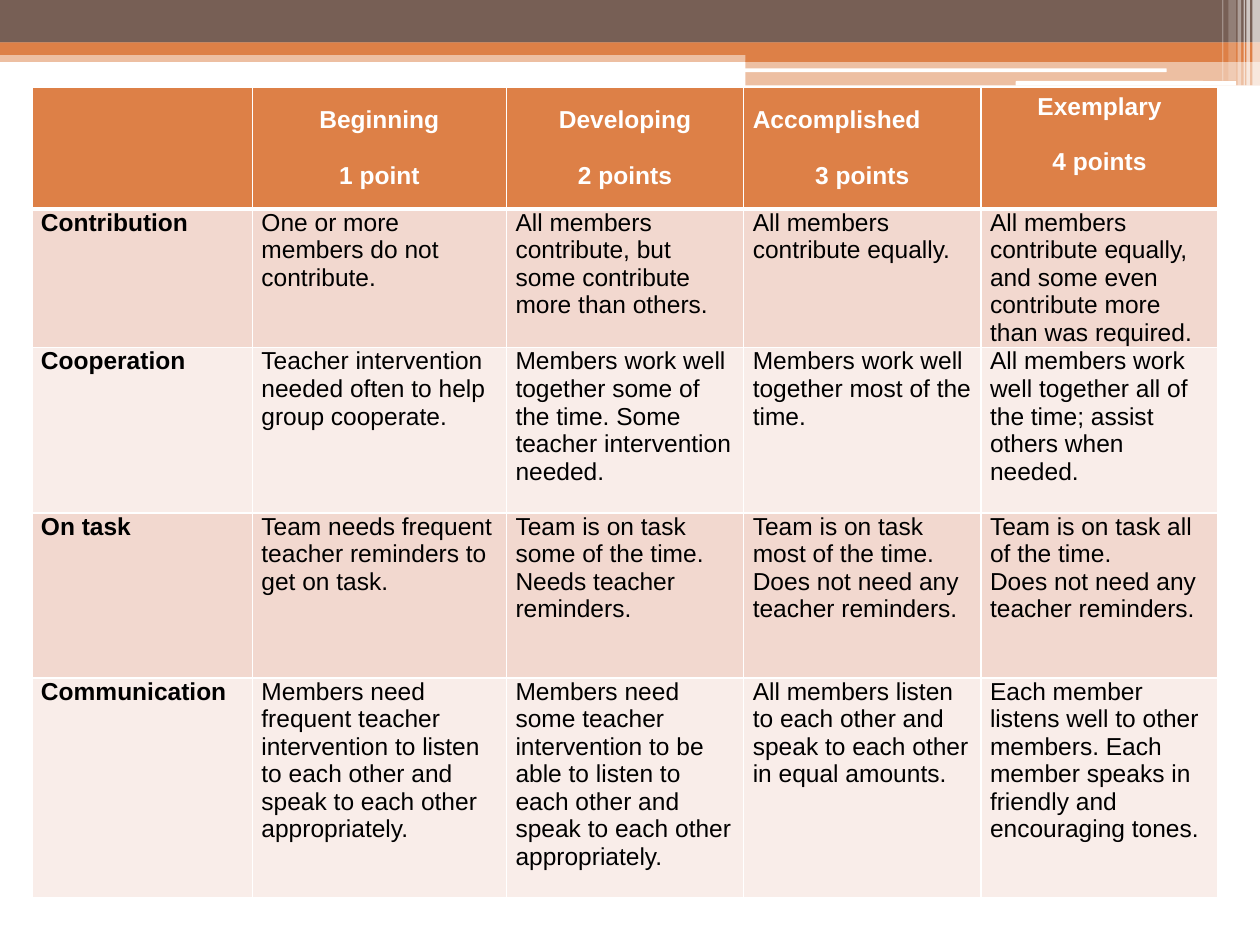
"""Build a teamwork rubric slide: a banded header decoration above a scoring table."""
from dataclasses import dataclass

import lxml.etree
import pptx
import pptx.dml.color
import pptx.enum.shapes
import pptx.enum.text
import pptx.oxml.ns
import pptx.util

Pt = pptx.util.Pt
qn = pptx.oxml.ns.qn
ALIGN = pptx.enum.text.PP_ALIGN
SHAPE = pptx.enum.shapes.MSO_SHAPE

COLORS = {
    "brown": "775F55",
    "orange": "DD8047",
    "white": "FFFFFF",
    "black": "000000",
    "band_dark": "F2D8CF",
    "band_light": "F9EDE9",
}
FONT = "Arial"
FONT_SIZE = 14
LINE_HEIGHT = 15.8
CELL_INSET = 5.2
TABLE_LEFT, TABLE_TOP = 18.2, 49.7
COLUMN_WIDTHS = [126, 145.2, 135.6, 135.6, 135.6]
ROW_HEIGHTS = [69.8, 79.2, 94.4, 94.4, 125.6]


@dataclass(frozen=True)
class Bar:
    left: float
    top: float
    width: float
    height: float
    color: str
    opacity: int = 100
    rounded: bool = False


@dataclass(frozen=True)
class Level:
    name: str
    score: str
    name_align: ALIGN = ALIGN.CENTER
    bottom_inset: float = 0


@dataclass(frozen=True)
class Criterion:
    name: str
    descriptions: list[str]


BARS = [
    Bar(0, 28.8, 720, 6.6, "orange", 50),
    Bar(0, 0, 720, 24.4, "brown"),
    Bar(0, 24.2, 720, 7.2, "orange"),
    Bar(425.9, 28.2, 294.1, 7.2, "orange"),
    Bar(425.9, 34.6, 294.1, 14.2, "orange", 50),
    Bar(425.5, 39.1, 241.2, 2.2, "white", rounded=True),
    Bar(580.4, 46.3, 126, 2.7, "white", rounded=True),
    Bar(715.7, 0, 4.3, 49, "white", 65),
    Bar(712.2, 0, 2, 49, "white", 65),
    Bar(710.7, 0, 0.7, 49, "white", 60),
    Bar(707.2, 0, 2, 49, "white", 40),
    Bar(702, 0, 4.3, 46.1, "white", 20),
    Bar(698.4, 0, 0.7, 46.1, "white", 30),
]

LEVELS = [
    Level("Beginning", "1 point"),
    Level("Developing", "2 points"),
    Level("Accomplished", "3 points", name_align=ALIGN.LEFT),
    Level("Exemplary", "4 points", bottom_inset=LINE_HEIGHT),
]

CRITERIA = [
    Criterion("Contribution", [
        "One or more members do not contribute.",
        "All members contribute, but some contribute more than others.",
        "All members contribute equally.",
        "All members contribute equally, and some even contribute more than was required.",
    ]),
    Criterion("Cooperation", [
        "Teacher intervention needed often to help group cooperate.",
        "Members work well together some of the time. Some teacher intervention needed.",
        "Members work well together most of the time.",
        "All members work well together all of the time; assist others when needed.",
    ]),
    Criterion("On task", [
        "Team needs frequent teacher reminders to get on task.",
        "Team is on task some of the time. Needs teacher reminders.",
        "Team is on task most of the time. Does not need any teacher reminders.",
        "Team is on task all of the time.\nDoes not need any teacher reminders.",
    ]),
    Criterion("Communication", [
        "Members need frequent teacher intervention to listen to each other and speak "
        "to each other appropriately.",
        "Members need some teacher intervention to be able to listen to each other and "
        "speak to each other appropriately.",
        "All members listen to each other and speak to each other in equal amounts.",
        "Each member listens well to other members. Each member speaks in friendly and "
        "encouraging tones.",
    ]),
]


def rgb(color: str) -> pptx.dml.color.RGBColor:
    return pptx.dml.color.RGBColor.from_string(COLORS[color])


def draw_bar(slide, bar: Bar) -> None:
    outline = SHAPE.ROUNDED_RECTANGLE if bar.rounded else SHAPE.RECTANGLE
    shape = slide.shapes.add_shape(
        outline, Pt(bar.left), Pt(bar.top), Pt(bar.width), Pt(bar.height))
    shape.shadow.inherit = False
    shape.line.fill.background()
    shape.fill.solid()
    shape.fill.fore_color.rgb = rgb(bar.color)
    if bar.opacity < 100:
        tint = shape.fill._xPr.find(qn("a:solidFill"))[0]
        lxml.etree.SubElement(tint, qn("a:alpha"), val=str(bar.opacity * 1000))


def style_cell(cell, fill: str, bottom_border: float = 1, top_border: float = 1) -> None:
    properties = cell._tc.get_or_add_tcPr()
    borders = {"lnL": 1, "lnR": 1, "lnT": top_border, "lnB": bottom_border}
    for side, width in borders.items():
        border = lxml.etree.SubElement(properties, qn(f"a:{side}"), w=str(int(Pt(width))))
        paint = lxml.etree.SubElement(border, qn("a:solidFill"))
        lxml.etree.SubElement(paint, qn("a:srgbClr"), val=COLORS["white"])
    cell.fill.solid()
    cell.fill.fore_color.rgb = rgb(fill)
    cell.margin_left = cell.margin_right = Pt(CELL_INSET)
    cell.margin_top = cell.margin_bottom = 0


def write_paragraph(paragraph, text: str, color: str, bold: bool,
                    align: ALIGN = ALIGN.LEFT) -> None:
    paragraph.alignment = align
    run = paragraph.add_run()
    run.text = text
    run.font.name = FONT
    run.font.size = Pt(FONT_SIZE)
    run.font.bold = bold
    run.font.color.rgb = rgb(color)


def write_level(cell, level: Level) -> None:
    cell.vertical_anchor = pptx.enum.text.MSO_ANCHOR.MIDDLE
    cell.margin_bottom = Pt(level.bottom_inset)
    heading = cell.text_frame.paragraphs[0]
    heading.space_after = Pt(LINE_HEIGHT)
    write_paragraph(heading, level.name, "white", True, level.name_align)
    write_paragraph(cell.text_frame.add_paragraph(), level.score, "white", True, ALIGN.CENTER)


def write_criterion(cells, criterion: Criterion) -> None:
    for column, text in enumerate([criterion.name, *criterion.descriptions]):
        frame = cells[column].text_frame
        for index, line in enumerate(text.split("\n")):
            paragraph = frame.add_paragraph() if index else frame.paragraphs[0]
            write_paragraph(paragraph, line, "black", column == 0)


def draw_rubric(slide) -> None:
    rubric = slide.shapes.add_table(
        len(ROW_HEIGHTS), len(COLUMN_WIDTHS), Pt(TABLE_LEFT), Pt(TABLE_TOP),
        Pt(sum(COLUMN_WIDTHS)), Pt(sum(ROW_HEIGHTS))).table
    for column, width in zip(rubric.columns, COLUMN_WIDTHS):
        column.width = Pt(width)
    for index, (row, height) in enumerate(zip(rubric.rows, ROW_HEIGHTS)):
        row.height = Pt(height)
        fill = "orange" if index == 0 else "band_dark" if index % 2 else "band_light"
        for cell in row.cells:
            style_cell(cell, fill, 3 if index == 0 else 1, 3 if index == 1 else 1)
    for column, level in enumerate(LEVELS, start=1):
        write_level(rubric.cell(0, column), level)
    for index, criterion in enumerate(CRITERIA, start=1):
        write_criterion(rubric.rows[index].cells, criterion)


def main() -> None:
    presentation = pptx.Presentation()
    presentation.slide_width, presentation.slide_height = Pt(720), Pt(540)
    slide = presentation.slides.add_slide(presentation.slide_layouts[6])
    for bar in BARS:
        draw_bar(slide, bar)
    draw_rubric(slide)
    presentation.save("out.pptx")


if __name__ == "__main__":
    main()
